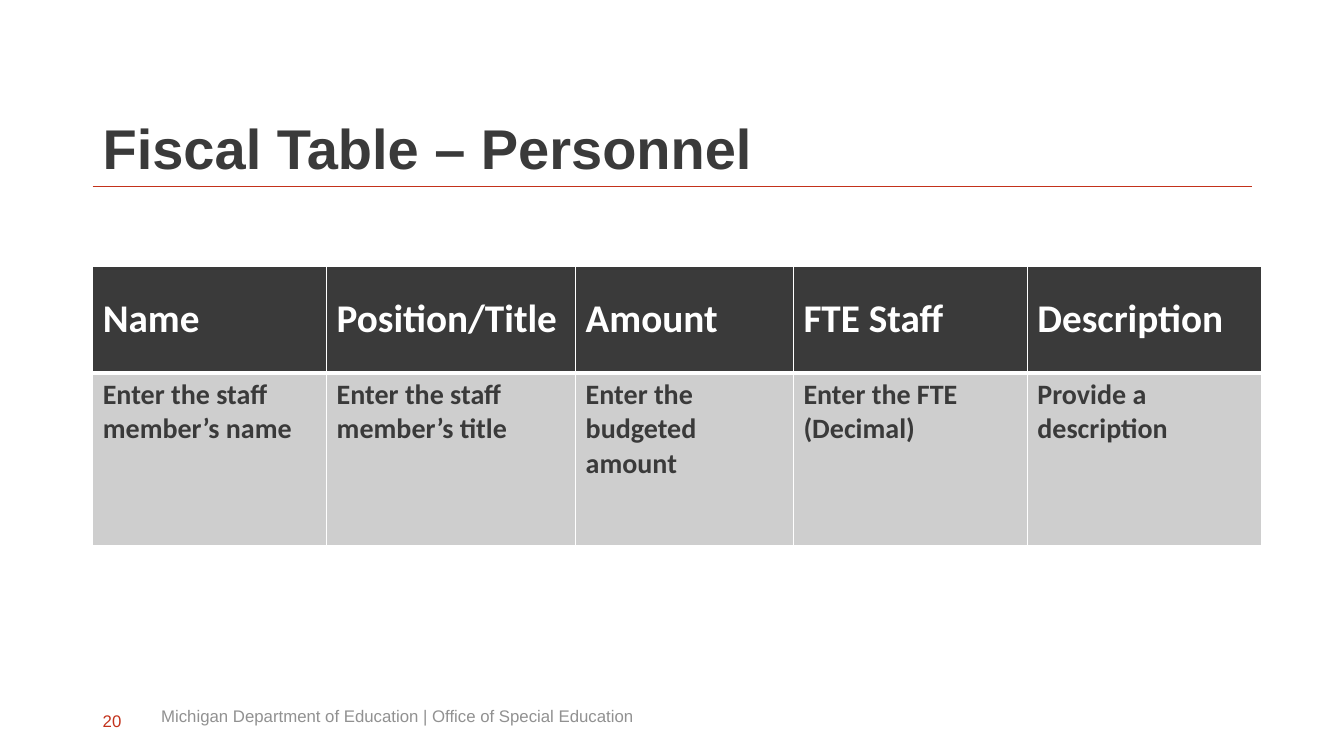
from lxml import etree
from pptx import Presentation
from pptx.dml.color import RGBColor
from pptx.enum.shapes import MSO_CONNECTOR
from pptx.enum.text import MSO_ANCHOR
from pptx.oxml.ns import qn
from pptx.util import Inches, Pt

CHARCOAL = RGBColor(0x3A, 0x3A, 0x3A)
RED = RGBColor(0xC3, 0x32, 0x1B)
GRAY = RGBColor(0x91, 0x91, 0x91)
LIGHT_GRAY = RGBColor(0xCE, 0xCE, 0xCE)
WHITE = RGBColor(0xFF, 0xFF, 0xFF)
LEFT = 0.92


def write(frame, text, size, color, font="Arial", bold=False, line_spacing=None):
    frame.word_wrap = True
    paragraph = frame.paragraphs[0]
    paragraph.line_spacing = line_spacing
    run = paragraph.add_run()
    run.text = text
    run.font.name = font
    run.font.size = Pt(size)
    run.font.bold = bold
    run.font.color.rgb = color


def add_border(cell, side, points):
    """Draw a white border on one side (L, R, T or B); call before filling the cell."""
    properties = cell._tc.get_or_add_tcPr()
    line = etree.SubElement(properties, qn(f"a:ln{side}"), w=str(Pt(points)))
    fill = etree.SubElement(line, qn("a:solidFill"))
    etree.SubElement(fill, qn("a:srgbClr"), val=str(WHITE))


presentation = Presentation()
presentation.slide_width = Inches(13.33)
presentation.slide_height = Inches(7.5)
slide = presentation.slides.add_slide(presentation.slide_layouts[6])

# Title and rule
title_rule = slide.shapes.add_connector(
    MSO_CONNECTOR.STRAIGHT, Inches(LEFT), Inches(1.85), Inches(12.42), Inches(1.85))
title_rule.line.color.rgb = RED
title_rule.line.width = Pt(0.5)
etree.SubElement(title_rule._element.spPr, qn("a:effectLst"))

title = slide.shapes.add_textbox(Inches(LEFT), Inches(0.4), Inches(12), Inches(1.45)).text_frame
title.vertical_anchor = MSO_ANCHOR.BOTTOM
write(title, "Fiscal Table – Personnel", 40, CHARCOAL, bold=True, line_spacing=0.9)

# Personnel table: heading, instruction, column width
columns = [
    ("Name", "Enter the staff member’s name", 2.32),
    ("Position/Title", "Enter the staff member’s title", 2.47),
    ("Amount", "Enter the budgeted amount", 2.16),
    ("FTE Staff", "Enter the FTE (Decimal)", 2.32),
    ("Description", "Provide a description", 2.32),
]
# Height, text size, text colour, fill, anchor, top and bottom border
row_styles = [
    (1.06, 28, WHITE, CHARCOAL, MSO_ANCHOR.MIDDLE, 1, 3),
    (1.71, 20, CHARCOAL, LIGHT_GRAY, MSO_ANCHOR.TOP, 3, 1),
]
personnel = slide.shapes.add_table(
    len(row_styles), len(columns), Inches(LEFT), Inches(2.64), Inches(11.59), Inches(2.77)).table

for column, (*_, width) in zip(personnel.columns, columns):
    column.width = Inches(width)

for row, (height, size, color, fill, anchor, top, bottom) in enumerate(row_styles):
    personnel.rows[row].height = Inches(height)
    for col, texts in enumerate(columns):
        cell = personnel.cell(row, col)
        for side, points in (("L", 1), ("R", 1), ("T", top), ("B", bottom)):
            add_border(cell, side, points)
        cell.fill.solid()
        cell.fill.fore_color.rgb = fill
        cell.vertical_anchor = anchor
        write(cell.text_frame, texts[row], size, color, font="Calibri", bold=True)

# Footer
footer = [
    ("20", LEFT, 6.95, 0.45, RED),
    ("Michigan Department of Education | Office of Special Education", 1.5, 6.9, 8.39, GRAY),
]
for text, left, top, width, color in footer:
    frame = slide.shapes.add_textbox(
        Inches(left), Inches(top), Inches(width), Inches(0.4)).text_frame
    frame.vertical_anchor = MSO_ANCHOR.MIDDLE
    write(frame, text, 12, color)

presentation.save("out.pptx")
